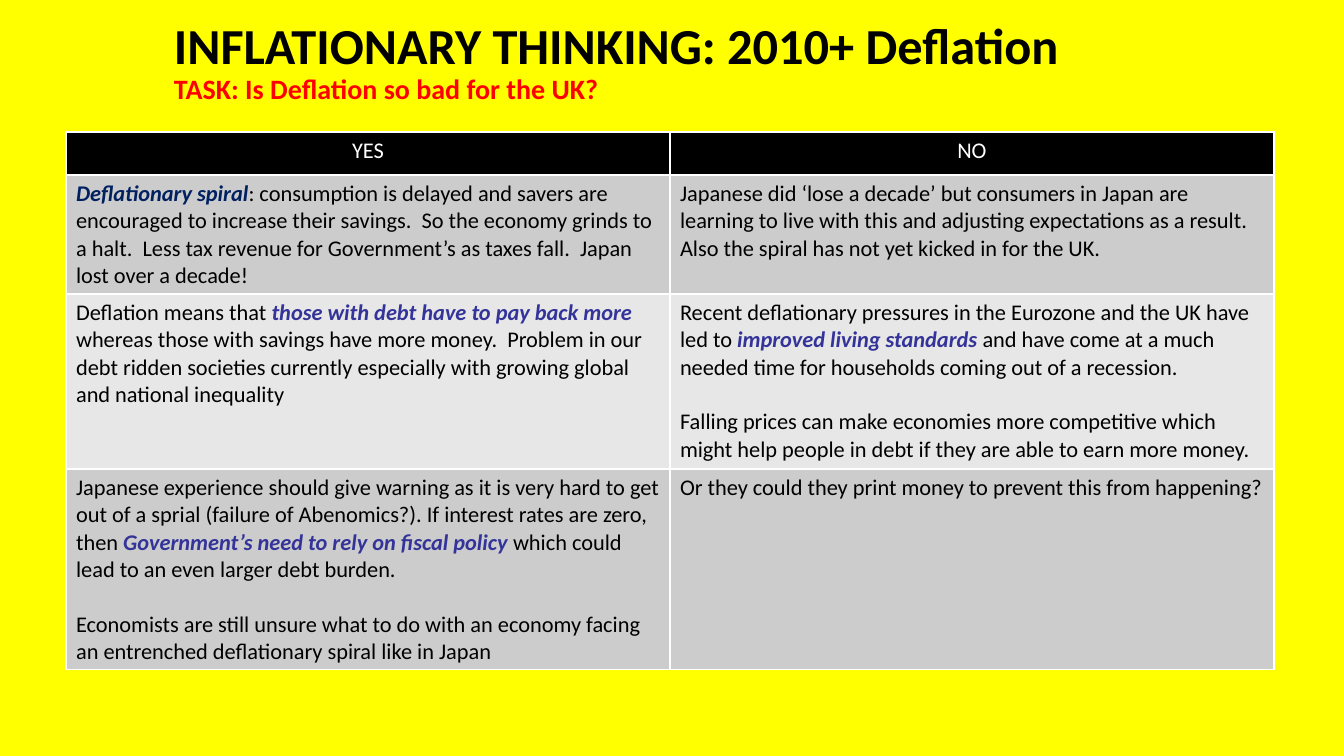
"""Build the slide that weighs up whether deflation is bad for the UK."""
from lxml import etree
from pptx import Presentation
from pptx.dml.color import RGBColor
from pptx.enum.text import MSO_ANCHOR, PP_ALIGN
from pptx.oxml.ns import qn
from pptx.util import Emu, Pt

MIDDLE, TOP = MSO_ANCHOR.MIDDLE, MSO_ANCHOR.TOP
LEFT, CENTER = PP_ALIGN.LEFT, PP_ALIGN.CENTER
PAGE_WIDTH, PAGE_HEIGHT = 1344, 756
SCALE = 12192000 / PAGE_WIDTH
FONT = "Calibri"
BODY_SIZE = 16
BLANK_LINE = 19.5
COLORS = {
    "page": "FFFF00",
    "ink": "000000",
    "paper": "FFFFFF",
    "task": "FF0000",
    "navy": "002060",
    "indigo": "333399",
    "dark band": "CCCCCC",
    "light band": "E7E7E7",
}


def px(length):
    return Emu(round(length * SCALE))


def rgb(name):
    return RGBColor.from_string(COLORS[name])


class Slide:
    def __init__(self, deck):
        self.page = deck.slides.add_slide(deck.slide_layouts[6])
        fill = self.page.background.fill
        fill.solid()
        fill.fore_color.rgb = rgb("page")

    def span(self, para, text, size=BODY_SIZE, color="ink", bold=False, italic=False):
        run = para.add_run()
        run.text = text
        font = run.font
        font.name, font.size = FONT, Pt(size)
        font.bold, font.italic = bold, italic
        font.color.rgb = rgb(color)

    def title(self, left, top, width, height, heading, task):
        box = self.page.shapes.add_textbox(px(left), px(top), px(width), px(height))
        frame = box.text_frame
        frame.word_wrap = True
        frame.vertical_anchor = MIDDLE
        para = frame.paragraphs[0]
        para.line_spacing = 0.9
        self.span(para, heading, 36, bold=True)
        para.add_line_break()
        self.span(para, task, 20, "task", bold=True)

    def borders(self, cell):
        properties = cell._tc.get_or_add_tcPr()
        for position, side in enumerate(("lnL", "lnR", "lnT", "lnB")):
            line = etree.Element(qn(f"a:{side}"), w=str(Pt(1)))
            fill = etree.SubElement(line, qn("a:solidFill"))
            etree.SubElement(fill, qn("a:srgbClr"), val=COLORS["paper"])
            properties.insert(position, line)

    def cell(self, cell, paragraphs, fill, color="ink", align=LEFT, gap=0):
        cell.fill.solid()
        cell.fill.fore_color.rgb = rgb(fill)
        cell.vertical_anchor = TOP
        self.borders(cell)
        frame = cell.text_frame
        for index, spans in enumerate(paragraphs):
            para = frame.add_paragraph() if index else frame.paragraphs[0]
            para.alignment = align
            para.space_before = Pt(gap if index else 0)
            for text, *accent in spans:
                emphasis = bool(accent)
                self.span(para, text, color=accent[0] if accent else color,
                          bold=emphasis, italic=emphasis)

    def table(self, left, top, column_width, row_heights, headings, rows):
        columns = len(headings)
        frame = self.page.shapes.add_table(
            len(row_heights), columns, px(left), px(top),
            px(column_width * columns), px(sum(row_heights)))
        table = frame.table
        for column in table.columns:
            column.width = px(column_width)
        for row, height in zip(table.rows, row_heights):
            row.height = px(height)
        for column, heading in enumerate(headings):
            self.cell(table.cell(0, column), [[(heading,)]], "ink", "paper", CENTER)
        for number, (gap, *arguments) in enumerate(rows, 1):
            band = "dark band" if number % 2 else "light band"
            for column, paragraphs in enumerate(arguments):
                self.cell(table.cell(number, column), paragraphs, band, gap=gap)


ROWS = [
    (0, [
        [("Deflationary spiral", "navy"),
         (": consumption is delayed and savers are encouraged to increase their "
          "savings.  So the economy grinds to a halt.  Less tax revenue for "
          "Government’s as taxes fall.  Japan lost over a decade!",)],
    ], [
        [("Japanese did ‘lose a decade’ but consumers in Japan are learning to live "
          "with this and adjusting expectations as a result.",)],
        [("Also the spiral has not yet kicked in for the UK.",)],
    ]),
    (BLANK_LINE, [
        [("Deflation means that ",),
         ("those with debt have to pay back more ", "indigo"),
         ("whereas those with savings have more money.  Problem in our debt ridden "
          "societies currently especially with growing global and national "
          "inequality",)],
    ], [
        [("Recent deflationary pressures in the Eurozone and the UK have led to ",),
         ("improved living standards ", "indigo"),
         ("and have come at a much needed time for households coming out of a "
          "recession.",)],
        [("Falling prices can make economies more competitive which might help "
          "people in debt if they are able to earn more money.",)],
    ]),
    (BLANK_LINE, [
        [("Japanese experience should give warning as it is very hard to get out of "
          "a sprial (failure of Abenomics?). If interest rates are zero, then ",),
         ("Government’s need to rely on fiscal policy", "indigo"),
         (" which could lead to an even larger debt burden.",)],
        [("Economists are still unsure what to do with an economy facing an "
          "entrenched deflationary spiral like in Japan",)],
    ], [
        [("Or they could they print money to prevent this from happening?",)],
    ]),
]

deck = Presentation()
deck.slide_width, deck.slide_height = px(PAGE_WIDTH), px(PAGE_HEIGHT)
slide = Slide(deck)
slide.title(164, 0, 1012, 126, "INFLATIONARY THINKING: 2010+ Deflation",
            "TASK: Is Deflation so bad for the UK?")
slide.table(66, 132, 604, [43, 119, 175, 201], ["YES", "NO"], ROWS)
deck.save("out.pptx")
